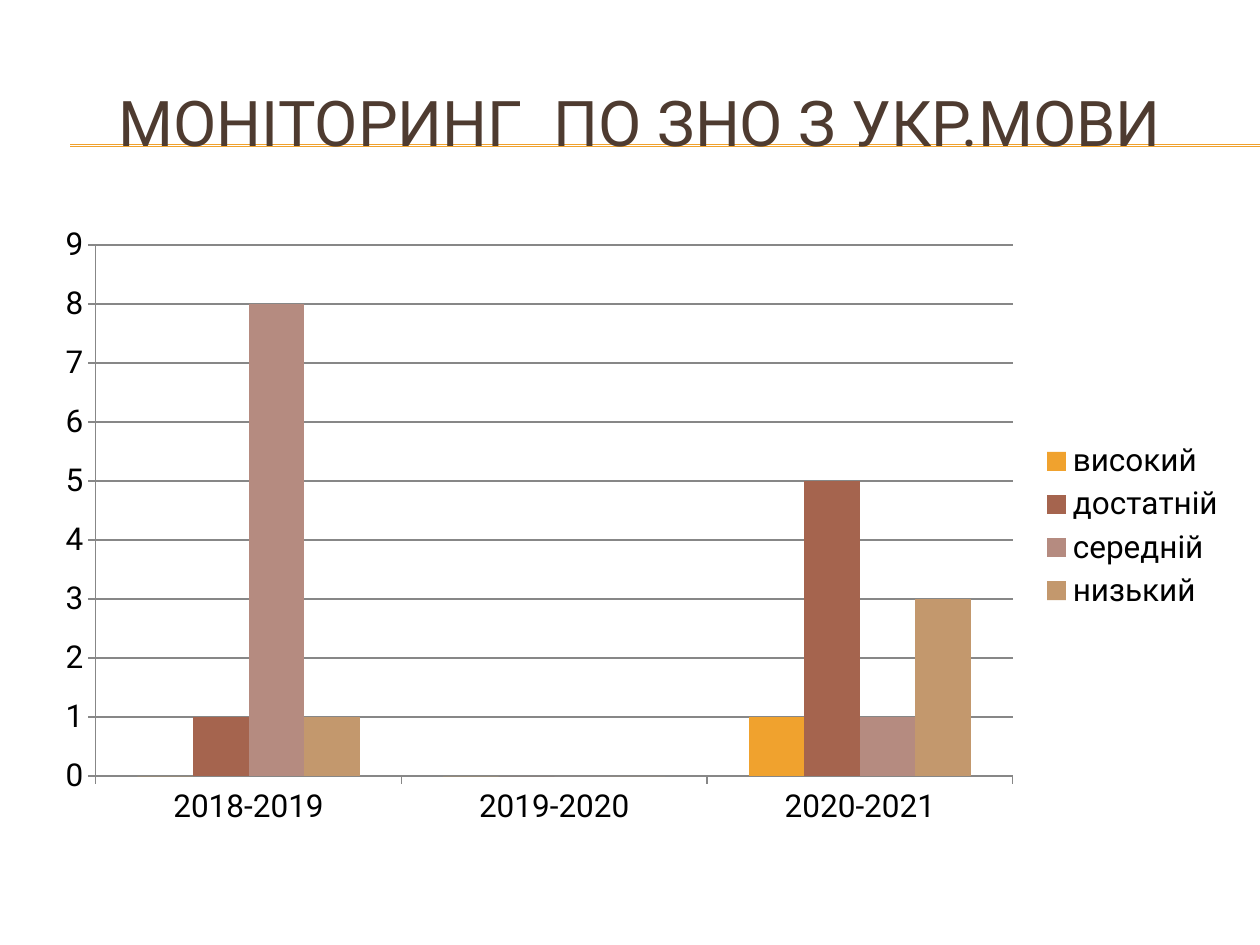
import pptx
import pptx.chart.data
import pptx.dml.color
import pptx.enum.chart
import pptx.enum.shapes
import pptx.enum.text
import pptx.oxml
import pptx.util
from pptx.util import Cm, Pt

RGBColor = pptx.dml.color.RGBColor
BLACK = RGBColor(0x00, 0x00, 0x00)
BROWN = RGBColor(0x4E, 0x3B, 0x30)
GREY = RGBColor(0x87, 0x87, 0x87)
ORANGE = RGBColor(0xF0, 0xA2, 0x2E)
RUST = RGBColor(0xA5, 0x64, 0x4E)
ROSE = RGBColor(0xB5, 0x8B, 0x80)
SAND = RGBColor(0xC3, 0x98, 0x6D)

YEARS = ["2018-2019", "2019-2020", "2020-2021"]
LEVELS = [
    ("високий", (0, 0, 1), ORANGE),
    ("достатній", (1, 0, 5), RUST),
    ("середній", (8, 0, 1), ROSE),
    ("низький", (1, 0, 3), SAND),
]


class SlideBuilder:
    font_name = "Roboto"

    def __init__(self, slide):
        self.slide = slide

    def style_font(self, font, size, color):
        for key, value in {"name": self.font_name, "size": Pt(size), "bold": False}.items():
            setattr(font, key, value)
        font.color.rgb = color

    def rule(self, left, right, y):
        rule = self.slide.shapes.add_connector(
            pptx.enum.shapes.MSO_CONNECTOR.STRAIGHT, Cm(left), Cm(y), Cm(right), Cm(y))
        rule.line.color.rgb = ORANGE
        rule.line.width = Pt(0.75)
        pptx.oxml.ns.qn("a:effectLst")
        rule._element.spPr.append(pptx.oxml.parse_xml(
            '<a:effectLst xmlns:a="http://schemas.openxmlformats.org/drawingml/2006/main"/>'))

    def title(self, text, left, top, width, height):
        heading = self.slide.shapes.title
        place = {"left": left, "top": top, "width": width, "height": height}
        for key, value in place.items():
            setattr(heading, key, Cm(value))
        frame = heading.text_frame
        frame.text = text
        frame.word_wrap = True
        frame.auto_size = pptx.enum.text.MSO_AUTO_SIZE.NONE
        frame.vertical_anchor = pptx.enum.text.MSO_ANCHOR.MIDDLE
        paragraph = frame.paragraphs[0]
        paragraph.alignment = pptx.enum.text.PP_ALIGN.CENTER
        self.style_font(paragraph.runs[0].font, 36, BROWN)

    def column_chart(self, categories, levels, left, top, width, height):
        data = pptx.chart.data.CategoryChartData(number_format="General")
        data.categories = categories
        for name, values, _ in levels:
            data.add_series(name, values)
        chart = self.slide.shapes.add_chart(
            pptx.enum.chart.XL_CHART_TYPE.COLUMN_CLUSTERED,
            Cm(left), Cm(top), Cm(width), Cm(height), data).chart
        chart.has_title = False
        self.style_font(chart.font, 18, BLACK)

        # Columns
        plot = chart.plots[0]
        plot.gap_width = 150
        plot.overlap = 0
        plot.vary_by_categories = False
        for series, (_, _, color) in zip(plot.series, levels):
            series.format.fill.solid()
            series.format.fill.fore_color.rgb = color

        # Axes and grid
        for axis in (chart.category_axis, chart.value_axis):
            axis.major_tick_mark = pptx.enum.chart.XL_TICK_MARK.OUTSIDE
            axis.format.line.color.rgb = GREY
            axis.format.line.width = Pt(0.75)
        scale = {"minimum_scale": 0, "maximum_scale": 9, "major_unit": 1,
                 "has_major_gridlines": True}
        for key, value in scale.items():
            setattr(chart.value_axis, key, value)
        grid_line = chart.value_axis.major_gridlines.format.line
        grid_line.color.rgb = GREY
        grid_line.width = Pt(0.75)

        # Legend
        chart.has_legend = True
        chart.legend.position = pptx.enum.chart.XL_LEGEND_POSITION.RIGHT
        chart.legend.include_in_layout = False


def main():
    deck = pptx.Presentation()
    deck.slide_width, deck.slide_height = Cm(25.4), Cm(19.05)
    builder = SlideBuilder(deck.slides.add_slide(deck.slide_layouts[5]))

    # Heading over a double rule
    for y in (2.92, 2.95):
        builder.rule(1.42, 25.4, y)
    builder.title("МОНІТОРИНГ  ПО ЗНО З УКР.МОВИ", 0.84, 1.27, 24.13, 2.34)

    # Results by school year
    builder.column_chart(YEARS, LEVELS, 0.84, 4.32, 24.13, 12.57)

    # Title text stands in front of the rules
    tree = builder.slide.shapes._spTree
    heading = builder.slide.shapes.title._element
    tree.remove(heading)
    tree.insert(len(tree) - 1, heading)

    deck.save("out.pptx")


if __name__ == "__main__":
    main()
